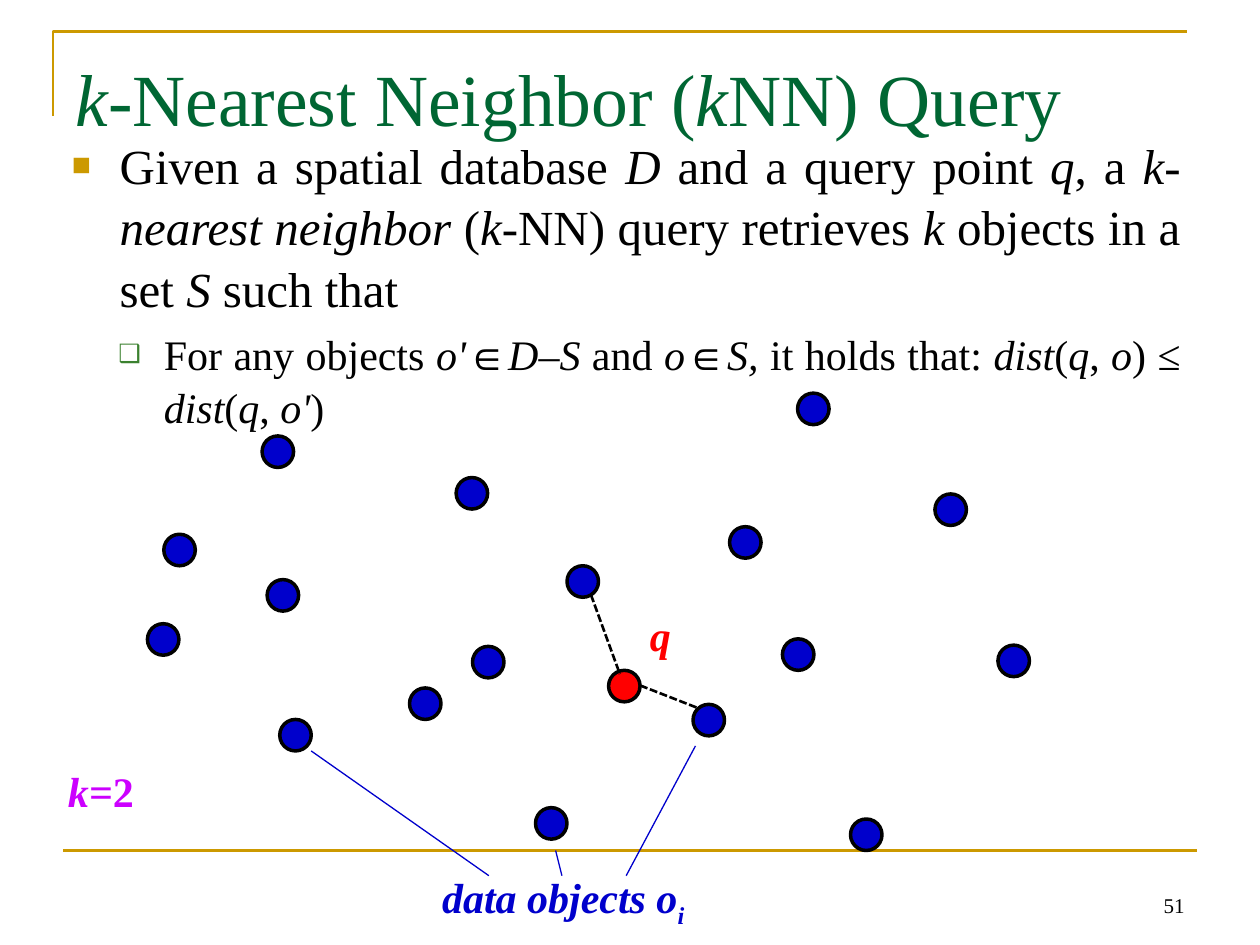
from lxml import etree
from pptx import Presentation
from pptx import util as u
from pptx.dml.color import RGBColor
from pptx.enum import dml, shapes, text
from pptx.oxml import ns

FONT = "Times New Roman"
COLORS = {
    "gold": "CC9900", "title": "006633", "leaf": "3B812F", "ink": "000000",
    "data": "0000CC", "query": "FF0000", "count": "CC00FF",
}
DOT = 0.25
DATA = [
    (2.08, 3.46), (6.33, 3.12), (1.17, 4.95), (1.3, 4.24), (2.22, 5.71),
    (3.62, 3.79), (4.5, 4.49), (2.12, 4.6), (3.25, 5.46), (6.21, 5.07),
    (3.75, 5.13), (4.25, 6.41), (5.79, 4.18), (5.5, 5.59), (7.42, 3.92),
    (6.75, 6.5), (7.92, 5.12),
]
QUERY = (4.83, 5.32)
LEADERS = [
    ((2.47, 5.96), (3.88, 6.95)),
    ((5.52, 5.92), (4.97, 6.95)),
    ((4.41, 6.75), (4.46, 6.95)),
]
NEAREST = [((5.08, 5.44), (5.54, 5.62)), ((4.69, 4.72), (4.92, 5.35))]

# Asterisks switch italics on and off.
TITLE = "*k*-Nearest Neighbor (*k*NN) Query"
GIVEN = ("Given a spatial database *D *and a query point *q*, a *k*-"
         "*nearest neighbor *(*k*-NN) query retrieves *k* objects in a set "
         "*S* such that")
HOLDS = ("For any objects *o'*∈*D–S* and *o*∈*S, *it holds that: "
         "*dist*(*q*, *o*) ≤ *dist*(*q*, *o'*)")


def rgb(name):
    return RGBColor.from_string(COLORS[name])


def place(shape, left, top, width, height):
    shape.left, shape.top = u.Inches(left), u.Inches(top)
    shape.width, shape.height = u.Inches(width), u.Inches(height)


def write(para, words, size, color, bold=False):
    """Add runs to para, with italics between asterisks."""
    for i, part in enumerate(words.split("*")):
        if part:
            run = para.add_run()
            run.text = part
            font = run.font
            font.name, font.size = FONT, u.Pt(size)
            font.bold, font.italic = bold, i % 2 == 1
            font.color.rgb = rgb(color)


def bullet(para, char, color, scale, left, hang):
    props = para._p.get_or_add_pPr()
    props.set("marL", str(u.Inches(left)))
    props.set("indent", str(-u.Inches(hang)))
    tint = etree.SubElement(props, ns.qn("a:buClr"))
    etree.SubElement(tint, ns.qn("a:srgbClr"), val=COLORS[color])
    etree.SubElement(props, ns.qn("a:buSzPct"), val=str(scale * 1000))
    etree.SubElement(props, ns.qn("a:buChar"), char=char)


def item(para, words, size, *mark):
    para.alignment = text.PP_ALIGN.JUSTIFY
    para.line_spacing = 1.05
    para.space_before = u.Pt(size * 0.2)
    bullet(para, *mark)
    write(para, words, size, "ink")


def line(slide, start, end, color, width, dash=None):
    ends = [u.Inches(v) for v in (*start, *end)]
    link = slide.shapes.add_connector(shapes.MSO_CONNECTOR.STRAIGHT, *ends)
    link.line.color.rgb = rgb(color)
    link.line.width = u.Pt(width)
    if dash:
        link.line.dash_style = dash
    etree.SubElement(link._element.spPr, ns.qn("a:effectLst"))


def corner(slide):
    pen = slide.shapes.build_freeform(u.Inches(0.42), u.Inches(0.92))
    pen.add_line_segments(
        [(u.Inches(0.42), u.Inches(0.25)), (u.Inches(9.42), u.Inches(0.25))],
        close=False)
    shape = pen.convert_to_shape()
    shape.shadow.inherit = False
    shape.fill.background()
    shape.line.color.rgb = rgb("gold")
    shape.line.width = u.Pt(1.5)


def dot(slide, spot, color):
    shape = slide.shapes.add_shape(
        shapes.MSO_SHAPE.OVAL, *[u.Inches(v) for v in (*spot, DOT, DOT)])
    shape.shadow.inherit = False
    shape.fill.solid()
    shape.fill.fore_color.rgb = rgb(color)
    shape.line.color.rgb = rgb("ink")
    shape.line.width = u.Pt(2)


def label(slide, box, words, color):
    frame = slide.shapes.add_textbox(*[u.Inches(v) for v in box]).text_frame
    frame.word_wrap = False
    frame.auto_size = text.MSO_AUTO_SIZE.SHAPE_TO_FIT_TEXT
    para = frame.paragraphs[0]
    write(para, words, 24, color, bold=True)
    return para


def head(slide):
    title = slide.shapes.title
    place(title, 0.5, 0.3, 9, 1.25)
    frame = title.text_frame
    frame.auto_size = text.MSO_AUTO_SIZE.NONE
    frame.vertical_anchor = text.MSO_ANCHOR.TOP
    frame.margin_top = u.Inches(0.12)
    para = frame.paragraphs[0]
    para.alignment = text.PP_ALIGN.LEFT
    write(para, TITLE, 42, "title")


def body(slide):
    holder = slide.placeholders[1]
    place(holder, 0.47, 1, 9, 4.95)
    frame = holder.text_frame
    frame.auto_size = text.MSO_AUTO_SIZE.NONE
    item(frame.paragraphs[0], GIVEN, 28, "■", "gold", 65, 0.38, 0.38)
    para = frame.add_paragraph()
    para.level = 1
    item(para, HOLDS, 24, "❑", "leaf", 60, 0.73, 0.36)


def number(slide):
    box = [u.Inches(v) for v in (7.17, 6.83, 2.33, 0.5)]
    frame = slide.shapes.add_textbox(*box).text_frame
    frame.word_wrap = True
    frame.vertical_anchor = text.MSO_ANCHOR.BOTTOM
    para = frame.paragraphs[0]
    para.alignment = text.PP_ALIGN.RIGHT
    write(para, "51", 12, "ink")


def main():
    deck = Presentation()
    deck.slide_width, deck.slide_height = u.Inches(10), u.Inches(7.5)
    slide = deck.slides.add_slide(deck.slide_layouts[1])
    corner(slide)
    line(slide, (0.5, 6.75), (9.5, 6.75), "gold", 1.5)
    head(slide)
    body(slide)
    number(slide)
    for spot in DATA:
        dot(slide, spot, "data")
    dot(slide, QUERY, "query")
    label(slide, (5.06, 4.79, 0.37, 0.5), "*q*", "query")
    name = label(slide, (3.41, 6.87, 2.18, 0.5), "*data objects o*", "data")
    write(name, "*i*", 24, "data", bold=True)
    name.runs[-1]._r.get_or_add_rPr().set("baseline", "-25000")
    label(slide, (0.44, 6.03, 0.73, 0.5), "*k=*2", "count")
    for start, end in LEADERS:
        line(slide, start, end, "data", 0.75)
    for start, end in NEAREST:
        line(slide, start, end, "ink", 1.5, dml.MSO_LINE.SQUARE_DOT)
    deck.save("out.pptx")


if __name__ == "__main__":
    main()
